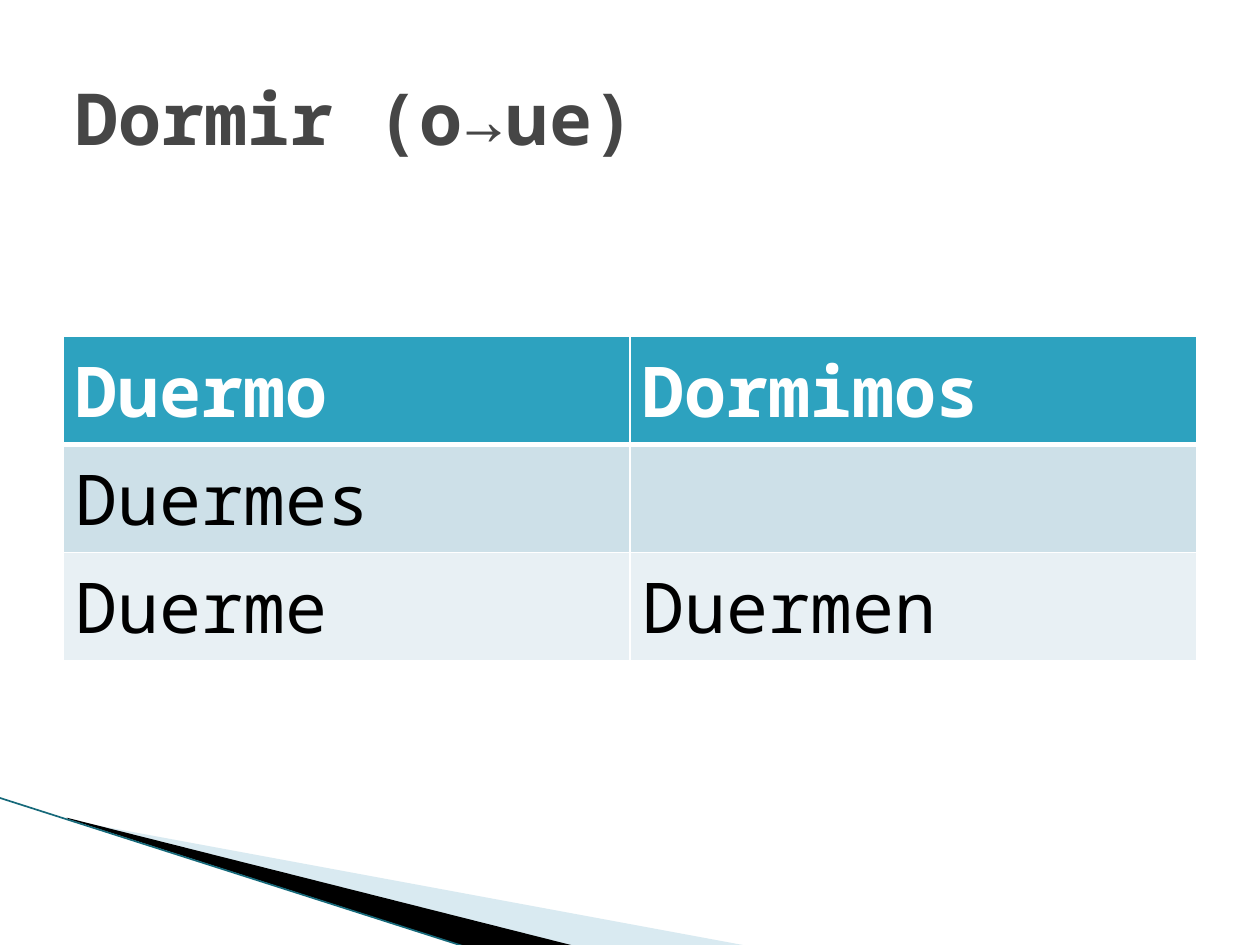
from lxml.etree import SubElement
from pptx import Presentation
from pptx.dml.color import RGBColor
from pptx.enum.shapes import MSO_CONNECTOR
from pptx.enum.text import MSO_ANCHOR, PP_ALIGN
from pptx.oxml.ns import qn
from pptx.util import Inches, Pt

COLORS = {
    "title": "464646", "white": "FFFFFF", "black": "000000",
    "header": "2DA2BF", "band_dark": "CDE0E8", "band_light": "E8F0F4",
    "wedge": "A0CBDC", "edge": "16697A",
}
FONT = "Noto Sans Mono"
CONJUGATION = [("Duermo", "Dormimos"), ("Duermes", ""), ("Duerme", "Duermen")]
ROW_FILLS = ["header", "band_dark", "band_light"]


def rgb(name):
    return RGBColor.from_string(COLORS[name])


def format_text(paragraph, size, color, bold):
    paragraph.alignment = PP_ALIGN.LEFT
    values = {"name": FONT, "size": Pt(size), "bold": bold}
    for run in paragraph.runs:
        for attribute, value in values.items():
            setattr(run.font, attribute, value)
        run.font.color.rgb = rgb(color)


def add_wedge(slide, left, top, offsets, color, opacity=100):
    points = [(Inches(left + x), Inches(top + y)) for x, y in offsets]
    builder = slide.shapes.build_freeform(*points[0], scale=1.0)
    builder.add_line_segments(points[1:], close=True)
    wedge = builder.convert_to_shape()
    wedge.shadow.inherit = False
    wedge.fill.solid()
    wedge.fill.fore_color.rgb = rgb(color)
    wedge.line.fill.background()
    if opacity < 100:
        tint = wedge.fill._xPr.find(".//" + qn("a:srgbClr"))
        SubElement(tint, qn("a:alpha"), val=str(opacity * 1000))


def add_corner(slide, left, top):
    # Pale and black wedges, with a thin edge along the black one
    add_wedge(slide, left + 0.56, top + 0.18,
              [(0, 0), (5.4, 1), (4.01, 1), (0, -0.01)], "wedge", 40)
    add_wedge(slide, left + 0.54, top + 0.16,
              [(0, 0), (4.04, 1.02), (3.19, 1.03), (0.01, 0.01)], "black")
    edge = slide.shapes.add_connector(
        MSO_CONNECTOR.STRAIGHT, Inches(left), Inches(top),
        Inches(left + 3.72), Inches(top + 1.19))
    edge.line.color.rgb = rgb("edge")
    edge.line.width = Pt(0.95)
    SubElement(edge._element.spPr, qn("a:effectLst"))


def place_title(slide, left, top, width, height):
    title = slide.shapes.title
    box = {"left": left, "top": top, "width": width, "height": height}
    for attribute, value in box.items():
        setattr(title, attribute, Inches(value))
    title.text_frame.text = "Dormir (o→ue)"
    title.text_frame.vertical_anchor = MSO_ANCHOR.MIDDLE
    format_text(title.text_frame.paragraphs[0], 41, "title", True)


def set_borders(cell, widths):
    properties = cell._tc.get_or_add_tcPr()
    for side, width in widths.items():
        border = SubElement(properties, qn(f"a:ln{side}"), w=str(Pt(width)))
        fill = SubElement(border, qn("a:solidFill"))
        SubElement(fill, qn("a:srgbClr"), val=COLORS["white"])


def add_conjugation(slide, left, top, width, height):
    frame = slide.shapes.add_table(
        len(CONJUGATION), len(CONJUGATION[0]),
        Inches(left), Inches(top), Inches(width), Inches(height))
    for row, forms in enumerate(CONJUGATION):
        for column, form in enumerate(forms):
            cell = frame.table.cell(row, column)
            # The rule under the header is thicker than the rest
            set_borders(cell, {"L": 1, "R": 1, "T": 3 if row == 1 else 1,
                               "B": 3 if row == 0 else 1})
            cell.fill.solid()
            cell.fill.fore_color.rgb = rgb(ROW_FILLS[row])
            if form:
                cell.text = form
                format_text(cell.text_frame.paragraphs[0], 40,
                            "black" if row else "white", row == 0)


def main():
    presentation = Presentation()
    presentation.slide_width = Inches(10)
    presentation.slide_height = Inches(7.5)
    slide = presentation.slides.add_slide(presentation.slide_layouts[5])
    add_corner(slide, -0.01, 6.33)
    add_conjugation(slide, 0.5, 2.67, 9, 2.55)
    place_title(slide, 0.5, 0.3, 9, 1.25)
    presentation.save("out.pptx")


if __name__ == "__main__":
    main()
